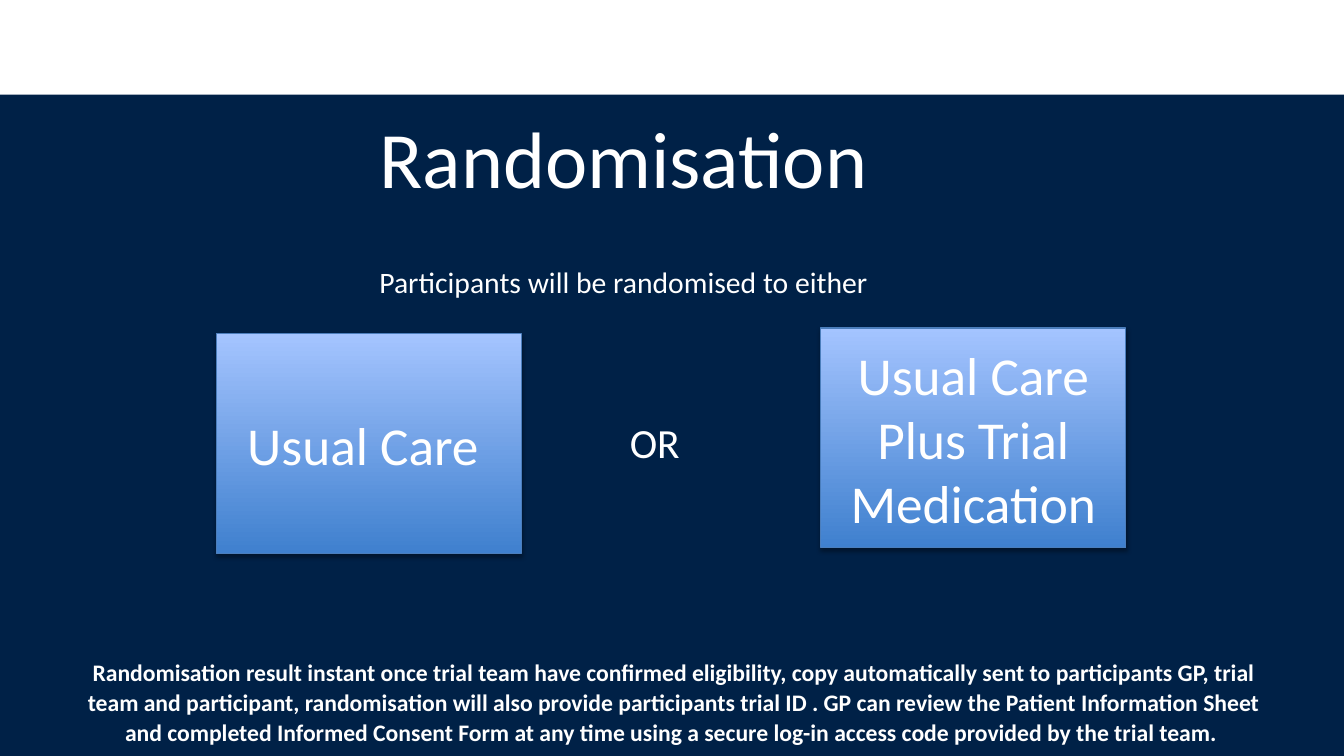
from dataclasses import dataclass

from lxml.etree import SubElement
from pptx import Presentation
from pptx.dml.color import RGBColor
from pptx.enum.shapes import MSO_SHAPE as Shape
from pptx.enum.text import MSO_ANCHOR as Anchor, MSO_AUTO_SIZE as AutoSize, PP_ALIGN as Align
from pptx.oxml.ns import qn
from pptx.util import Pt


@dataclass(frozen=True)
class Theme:
    font: str = "Calibri"
    navy: RGBColor = RGBColor.from_string("002147")
    white: RGBColor = RGBColor.from_string("FFFFFF")
    arm_bottom: RGBColor = RGBColor.from_string("3F80CE")
    arm_top: RGBColor = RGBColor.from_string("A4C4FF")
    arm_line: RGBColor = RGBColor.from_string("4B7EBC")
    title: int = 54
    arm: int = 36
    choice: int = 28
    lead: int = 20
    note: int = 16


theme = Theme()


def write(shape, text, size, align=Align.LEFT, anchor=Anchor.TOP, bold=False):
    frame = shape.text_frame
    frame.text = text
    frame.word_wrap = True
    frame.auto_size = AutoSize.NONE
    frame.vertical_anchor = anchor
    paragraph = frame.paragraphs[0]
    paragraph.alignment = align
    font = paragraph.font
    font.name, font.size, font.bold = theme.font, Pt(size), bold
    font.color.rgb = theme.white
    return paragraph


def add_soft_shadow(shape):
    shape.shadow.inherit = False
    effects = shape._element.spPr.find(qn("a:effectLst"))
    shadow = SubElement(effects, qn("a:outerShdw"), blurRad=str(Pt(3.1)),
                        dist=str(Pt(1.8)), dir="5400000", rotWithShape="0")
    color = SubElement(shadow, qn("a:srgbClr"), val="000000")
    SubElement(color, qn("a:alpha"), val="35000")


presentation = Presentation()
presentation.slide_width, presentation.slide_height = Pt(907.2), Pt(510.5)
title_only = presentation.slide_layouts[5]
slide = presentation.slides.add_slide(title_only)
shapes = slide.shapes

# Navy band, placed behind the title
band = shapes.add_shape(Shape.RECTANGLE, 0, Pt(64), Pt(907.2), Pt(446.5))
band.shadow.inherit = False
band.fill.solid()
band.fill.fore_color.rgb = theme.navy
band.line.fill.background()
shapes._spTree.insert(2, band._element)

# Title and lead-in
title = shapes.title
title.left, title.top, title.width, title.height = Pt(249), Pt(70), Pt(371.5), Pt(74)
write(title, "Randomisation", theme.title)
lead = shapes.add_textbox(Pt(249), Pt(174.5), Pt(371.5), Pt(32))
write(lead, "Participants will be randomised to either", theme.lead)

# The two trial arms
for text, left, top in (
    ("Usual Care ", 146, 225.5),
    ("Usual Care Plus Trial Medication", 554, 221.5),
):
    arm = shapes.add_shape(Shape.RECTANGLE, Pt(left), Pt(top), Pt(206), Pt(148.5))
    arm.fill.gradient()
    arm.fill.gradient_angle = 90
    for stop, color in zip(arm.fill.gradient_stops, (theme.arm_bottom, theme.arm_top)):
        stop.color.rgb = color
    arm.line.color.rgb = theme.arm_line
    arm.line.width = Pt(0.75)
    add_soft_shadow(arm)
    write(arm, text, theme.arm, Align.CENTER, Anchor.MIDDLE)

choice = shapes.add_textbox(Pt(418), Pt(278), Pt(54), Pt(41))
write(choice, "OR", theme.choice)

# Closing note
note = shapes.add_textbox(Pt(46.5), Pt(439), Pt(817), Pt(70))
note_paragraph = write(
    note,
    "Randomisation result instant once trial team have confirmed eligibility, copy "
    "automatically sent to participants GP, trial team and participant, randomisation "
    "will also provide participants trial ID . GP can review the Patient Information "
    "Sheet and completed Informed Consent Form at any time using a secure log-in access "
    "code provided by the trial team. ",
    theme.note, Align.CENTER, bold=True)
note_paragraph.line_spacing = 1.07

presentation.save("out.pptx")
